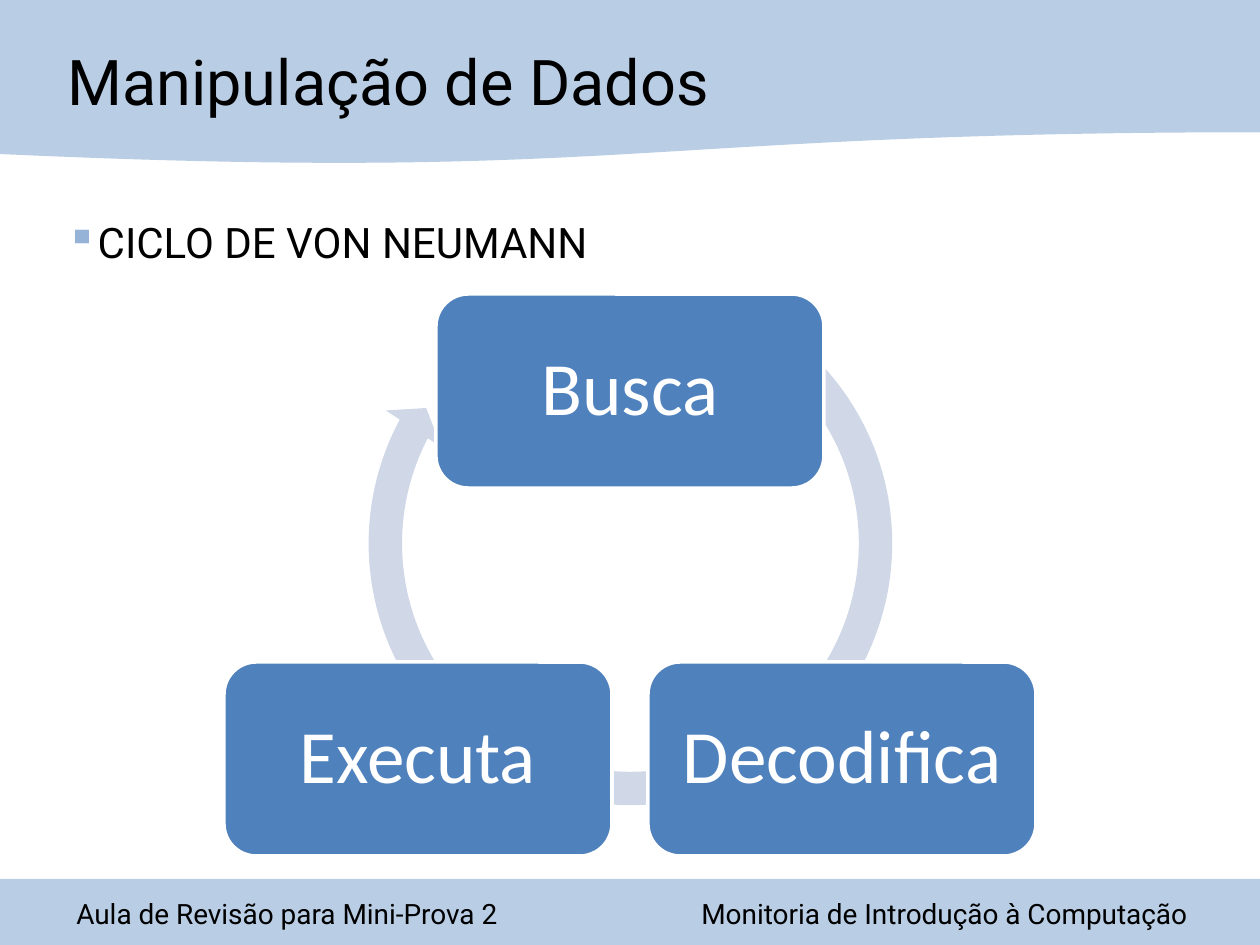
import math
from dataclasses import dataclass

import pptx
import pptx.dml.color
import pptx.enum.shapes
import pptx.enum.text
import pptx.oxml
import pptx.oxml.ns
import pptx.util

Shape = pptx.enum.shapes.MSO_SHAPE
Align = pptx.enum.text.PP_ALIGN
Anchor = pptx.enum.text.MSO_ANCHOR

PX = 914400 / 126
WIDE, HIGH = 1260, 945


@dataclass(frozen=True)
class Theme:
    band: str = "B9CDE5"
    node: str = "4F81BD"
    ring: str = "D0D8E8"
    mark: str = "95B3D7"
    ink: str = "000000"
    white: str = "FFFFFF"
    font: str = "Roboto"
    node_font: str = "Calibri"
    title: int = 36
    body: int = 24
    foot: int = 16
    label: int = 43


@dataclass(frozen=True)
class Box:
    left: int
    top: int
    width: int
    height: int

    def emu(self) -> list[int]:
        return [emu(v) for v in (self.left, self.top, self.width, self.height)]


@dataclass(frozen=True)
class Note:
    text: str
    box: Box
    size: int
    anchor: Anchor = Anchor.TOP


THEME = Theme()
TITLE = Note("Manipulação de Dados", Box(55, 6, 873, 149), THEME.title, Anchor.MIDDLE)
TOPIC = Note("CICLO DE VON NEUMANN", Box(54, 185, 730, 165), THEME.body)
FEET = (
    Note("Aula de Revisão para Mini-Prova 2", Box(64, 890, 515, 47), THEME.foot),
    Note("Monitoria de Introdução à Computação", Box(689, 890, 525, 47), THEME.foot),
)
STEPS = ("Busca", "Decodifica", "Executa")


def emu(px: int) -> int:
    return round(px * PX)


def color(code: str) -> pptx.dml.color.RGBColor:
    return pptx.dml.color.RGBColor.from_string(code)


def style(line, size: int, face: str, code: str) -> None:
    for run in line.runs:
        run.font.size = pptx.util.Pt(size)
        run.font.name = face
        run.font.color.rgb = color(code)


def draw_shape(slide, kind: Shape, box: Box, fill: str):
    shape = slide.shapes.add_shape(kind, *box.emu())
    shape.shadow.inherit = False
    shape.fill.solid()
    shape.fill.fore_color.rgb = color(fill)
    shape.line.fill.background()
    return shape


def draw_note(slide, note: Note):
    """Add a text box and return its only paragraph."""
    frame = slide.shapes.add_textbox(*note.box.emu()).text_frame
    frame.word_wrap = True
    frame.vertical_anchor = note.anchor
    frame.text = note.text
    line = frame.paragraphs[0]
    style(line, note.size, THEME.font, THEME.ink)
    return line


def add_bullet(line, hang: int) -> None:
    props = line._p.get_or_add_pPr()
    props.set("marL", str(emu(hang)))
    props.set("indent", str(-emu(hang)))
    space = pptx.oxml.ns.nsdecls("a")
    for xml in (
        f'<a:buClr {space}><a:srgbClr val="{THEME.mark}"/></a:buClr>',
        f'<a:buChar {space} char="▪"/>',
    ):
        props.append(pptx.oxml.parse_xml(xml))


def draw_node(slide, text: str, box: Box) -> None:
    node = draw_shape(slide, Shape.ROUNDED_RECTANGLE, box, THEME.node)
    node.line.color.rgb = color(THEME.white)
    node.line.width = pptx.util.Pt(2)
    frame = node.text_frame
    frame.word_wrap = True
    frame.vertical_anchor = Anchor.MIDDLE
    frame.margin_left = frame.margin_right = emu(23)
    frame.margin_top = frame.margin_bottom = emu(23)
    frame.text = text
    line = frame.paragraphs[0]
    line.alignment = Align.CENTER
    line.line_spacing = 0.9
    style(line, THEME.label, THEME.node_font, THEME.white)


def draw_cycle(slide) -> None:
    """Place the steps clockwise on a circle, over a round arrow."""
    ring = draw_shape(slide, Shape.CIRCULAR_ARROW, Box(352, 265, 557, 557), THEME.ring)
    for place, value in enumerate((0.06, 3.41, 124.71, 182.35, 0.06)):
        ring.adjustments[place] = value
    mid_x, mid_y, reach = WIDE // 2, 636, 245
    width, height = 388, 194
    for place, text in enumerate(STEPS):
        turn = math.radians(360 * place / len(STEPS) - 90)
        left = round(mid_x + reach * math.cos(turn) - width / 2)
        top = round(mid_y + reach * math.sin(turn) - height / 2)
        draw_node(slide, text, Box(left, top, width, height))


def main() -> None:
    deck = pptx.Presentation()
    deck.slide_width, deck.slide_height = emu(WIDE), emu(HIGH)
    slide = deck.slides.add_slide(deck.slide_layouts[6])
    draw_shape(slide, Shape.RECTANGLE, Box(0, 879, WIDE, 66), THEME.band)
    draw_shape(slide, Shape.FLOWCHART_DOCUMENT, Box(0, 0, WIDE, 165), THEME.band)
    for note in (*FEET, TITLE):
        draw_note(slide, note)
    topic = draw_note(slide, TOPIC)
    add_bullet(topic, 25)
    topic.line_spacing = 1.5
    draw_cycle(slide)
    deck.save("out.pptx")


if __name__ == "__main__":
    main()
